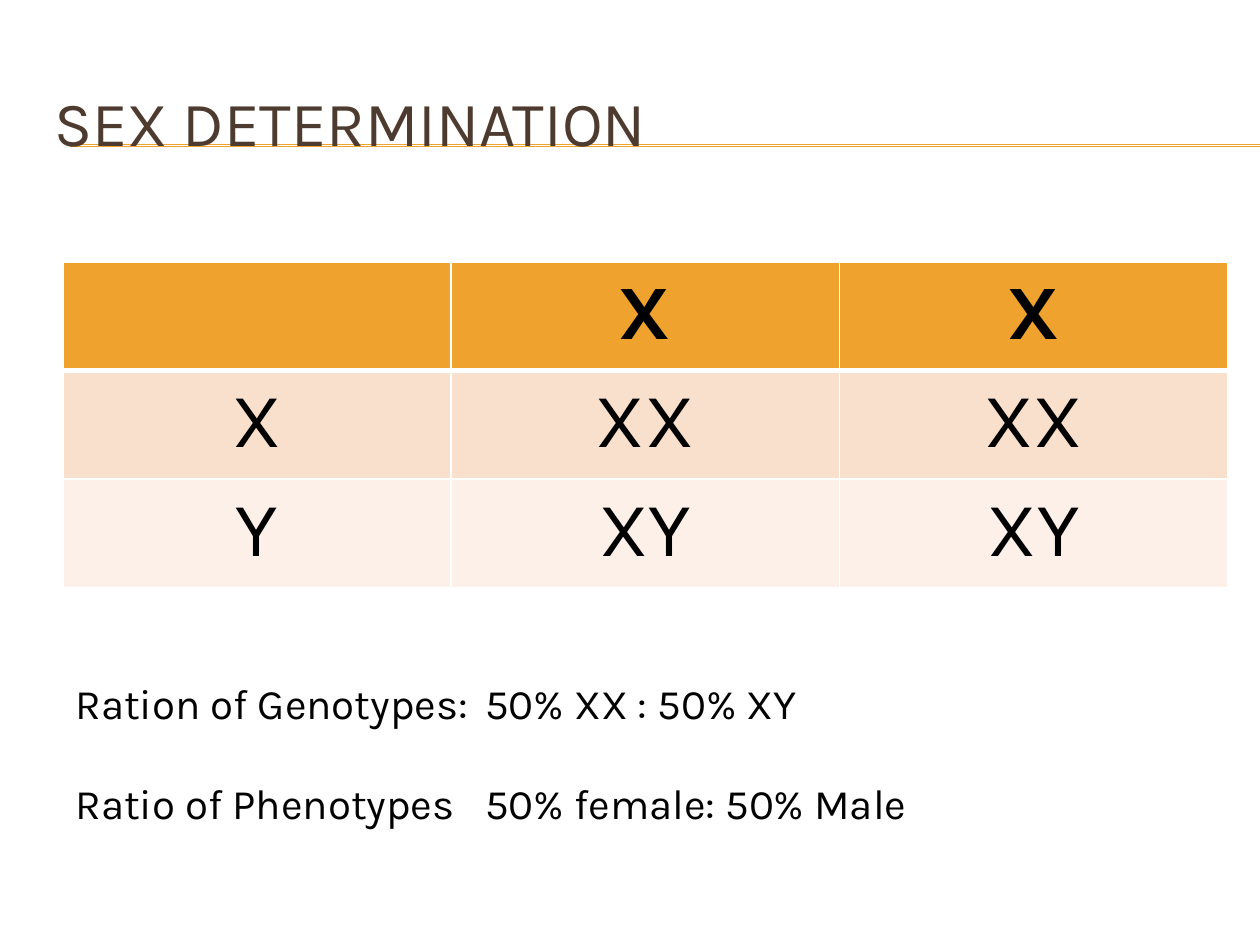
from lxml import etree
from pptx import Presentation
from pptx.dml.color import RGBColor
from pptx.enum.shapes import MSO_CONNECTOR
from pptx.enum.text import MSO_ANCHOR, PP_ALIGN
from pptx.oxml.ns import qn
from pptx.util import Cm, Pt

STRAIGHT = MSO_CONNECTOR.STRAIGHT
MIDDLE = MSO_ANCHOR.MIDDLE
CENTER = PP_ALIGN.CENTER

FONT = "Karla"
AMBER = "F0A22E"
BROWN = "4E3B30"
BLACK = "000000"
WHITE = "FFFFFF"
ROW_FILLS = [AMBER, "F9E0CD", "FCF0E8"]
CROSSES = [["", "X", "X"], ["X", "XX", "XX"], ["Y", "XY", "XY"]]
RATIOS = [
    "Ration of Genotypes:\t50% XX : 50% XY",
    "Ratio of Phenotypes\t50% female: 50% Male",
]


def rgb(value):
    return RGBColor.from_string(value)


def style(paragraph, size, color, bold=False):
    font = paragraph.font
    font.name = FONT
    font.size = Pt(size)
    font.bold = bold
    font.color.rgb = rgb(color)


def add_rule(slide, left, top, right):
    rule = slide.shapes.add_connector(STRAIGHT, left, top, right, top)
    rule.line.color.rgb = rgb(AMBER)
    rule.line.width = Pt(0.75)
    etree.SubElement(rule._element.spPr, qn("a:effectLst"))


def add_heading(slide, left, top, width, height):
    for offset in (1.65, 1.68):
        add_rule(slide, left + Cm(0.58), top + Cm(offset), Cm(25.4))
    heading = slide.shapes.add_textbox(left, top, width, height).text_frame
    heading.word_wrap = True
    heading.vertical_anchor = MIDDLE
    heading.text = "SEX DETERMINATION"
    style(heading.paragraphs[0], 36, BROWN)


def set_borders(cell, widths):
    properties = cell._tc.get_or_add_tcPr()
    for position, (side, width) in enumerate(widths.items()):
        border = etree.Element(qn(f"a:ln{side}"), w=str(Pt(width)))
        fill = etree.SubElement(border, qn("a:solidFill"))
        etree.SubElement(fill, qn("a:srgbClr"), val=WHITE)
        properties.insert(position, border)


def add_punnett_square(slide, left, top, width, height):
    square = slide.shapes.add_table(3, 3, left, top, width, height).table
    for row, alleles in enumerate(CROSSES):
        for column, allele in enumerate(alleles):
            cell = square.cell(row, column)
            cell.text = allele
            cell.fill.solid()
            cell.fill.fore_color.rgb = rgb(ROW_FILLS[row])
            paragraph = cell.text_frame.paragraphs[0]
            paragraph.alignment = CENTER
            style(paragraph, 44, BLACK, bold=row == 0)
            set_borders(cell, {
                "L": 1,
                "R": 1,
                "T": 3 if row == 1 else 1,
                "B": 3 if row == 0 else 1,
            })


def add_ratios(slide, left, top, width, height):
    ratios = slide.shapes.add_textbox(left, top, width, height).text_frame
    ratios.word_wrap = True
    for index, ratio in enumerate(RATIOS):
        paragraph = ratios.paragraphs[0] if index == 0 else ratios.add_paragraph()
        paragraph.add_run().text = ratio
        style(paragraph, 24, BLACK)
        paragraph.space_before = Pt(28 * index)
        tabs = etree.Element(qn("a:tabLst"))
        etree.SubElement(tabs, qn("a:tab"), pos=str(Cm(8.26)), algn="l")
        properties = paragraph._p.get_or_add_pPr()
        properties.find(qn("a:defRPr")).addprevious(tabs)


def main():
    presentation = Presentation()
    presentation.slide_width = Cm(25.4)
    presentation.slide_height = Cm(19.05)
    slide = presentation.slides.add_slide(presentation.slide_layouts[6])
    add_heading(slide, Cm(0.84), Cm(1.27), Cm(24.13), Cm(2.34))
    add_punnett_square(slide, Cm(1.27), Cm(5.29), Cm(23.48), Cm(6.55))
    add_ratios(slide, Cm(1.27), Cm(13.54), Cm(21.39), Cm(4.37))
    presentation.save("out.pptx")


if __name__ == "__main__":
    main()
